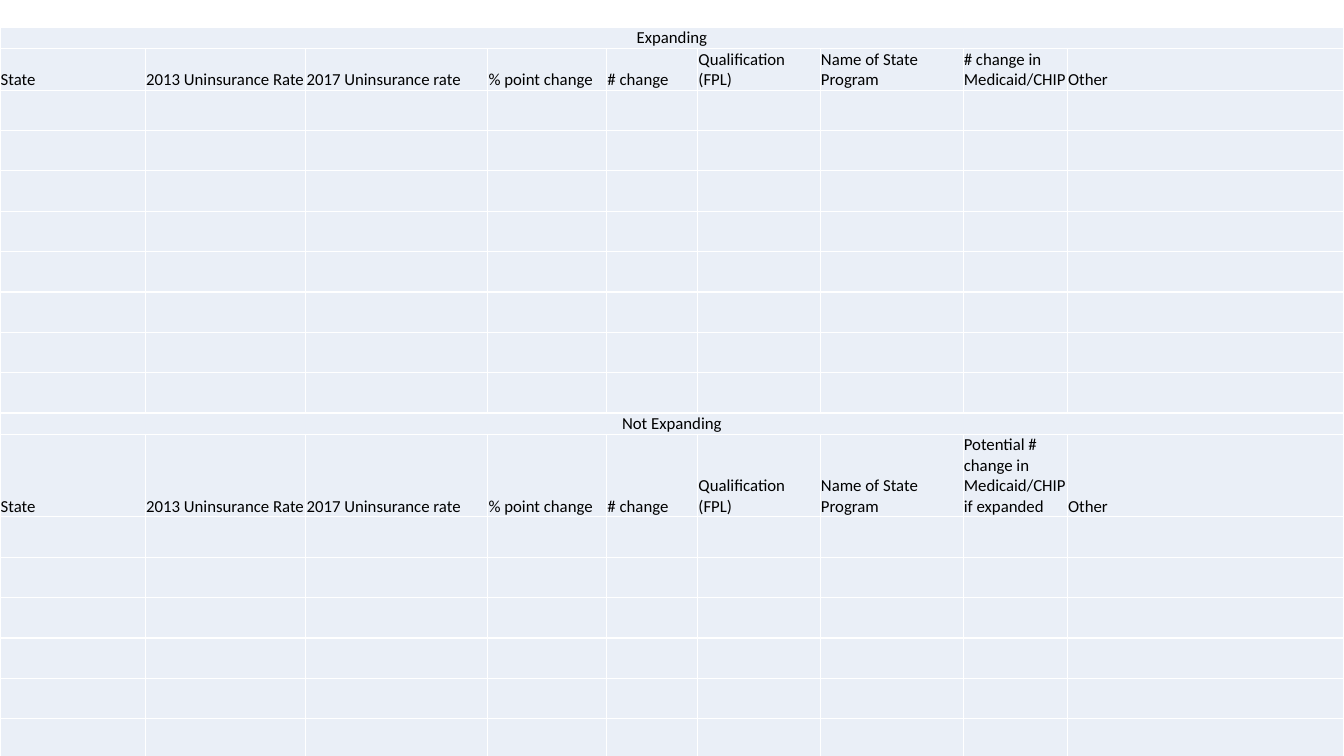
import dataclasses

import pptx
import pptx.dml.color
import pptx.enum.text
import pptx.oxml
import pptx.oxml.ns
import pptx.util

Pt = pptx.util.Pt
Color = pptx.dml.color.RGBColor.from_string
Align = pptx.enum.text.PP_ALIGN


@dataclasses.dataclass(frozen=True)
class Theme:
    font: str = "Calibri"
    text_size: float = 12
    text: str = "000000"
    cell_fill: str = "EAEFF7"
    border: str = "FFFFFF"
    border_width: float = 1
    inset: float = 0.5


class SlideBuilder:
    def __init__(self, slide, theme):
        self.slide = slide
        self.theme = theme

    def border_cell(self, cell):
        properties = cell._tc.get_or_add_tcPr()
        for side in ("lnL", "lnR", "lnT", "lnB"):
            properties.append(pptx.oxml.parse_xml(
                f'<a:{side} {pptx.oxml.ns.nsdecls("a")} w="{Pt(self.theme.border_width)}">'
                f'<a:solidFill><a:srgbClr val="{self.theme.border}"/></a:solidFill>'
                f'</a:{side}>'))

    def style_cell(self, cell):
        self.border_cell(cell)
        cell.fill.solid()
        cell.fill.fore_color.rgb = Color(self.theme.cell_fill)
        cell.margin_left = cell.margin_right = cell.margin_top = Pt(self.theme.inset)
        cell.margin_bottom = 0
        cell.vertical_anchor = pptx.enum.text.MSO_ANCHOR.BOTTOM

    def write_cell(self, cell, text, alignment=Align.LEFT):
        cell.text_frame.text = text
        paragraph = cell.text_frame.paragraphs[0]
        paragraph.alignment = alignment
        for run in paragraph.runs:
            run.font.name = self.theme.font
            run.font.size = Pt(self.theme.text_size)
            run.font.color.rgb = Color(self.theme.text)

    def table(self, left, top, column_widths, row_heights):
        frame = self.slide.shapes.add_table(
            len(row_heights), len(column_widths), Pt(left), Pt(top),
            Pt(sum(column_widths)), Pt(sum(row_heights)))
        table = frame.table
        table.first_row = table.horz_banding = False
        for column, width in zip(table.columns, column_widths):
            column.width = Pt(width)
        for row, height in zip(table.rows, row_heights):
            row.height = Pt(height)
        for cell in table.iter_cells():
            self.style_cell(cell)
        return table

    def section(self, table, first_row, banner, headings):
        banner_cell = table.cell(first_row, 0)
        banner_cell.merge(table.cell(first_row, len(headings) - 1))
        self.write_cell(banner_cell, banner, Align.CENTER)
        for column, heading in enumerate(headings):
            self.write_cell(table.cell(first_row + 1, column), heading)


COLUMN_WIDTHS = [103.9, 114.6, 130, 85, 65, 87.5, 102.1, 74.5, 197.4]
BANNER_HEIGHT, HEADING_HEIGHT, STATE_HEIGHT = 15, 29.5, 28.85
SECTIONS = [
    ("Expanding", "# change in Medicaid/CHIP", 8),
    ("Not Expanding", "Potential # change in Medicaid/CHIP if expanded", 7),
]


def main():
    presentation = pptx.Presentation()
    presentation.slide_width, presentation.slide_height = Pt(960), Pt(540)
    slide = presentation.slides.add_slide(presentation.slide_layouts[6])
    builder = SlideBuilder(slide, Theme())

    row_heights = []
    for _, _, state_count in SECTIONS:
        row_heights += [BANNER_HEIGHT, HEADING_HEIGHT] + [STATE_HEIGHT] * state_count
    table = builder.table(0, 19.5, COLUMN_WIDTHS, row_heights)

    first_row = 0
    for banner, enrollment_heading, state_count in SECTIONS:
        headings = [
            "State", "2013 Uninsurance Rate", "2017 Uninsurance rate",
            "% point change", "# change", "Qualification (FPL)",
            "Name of State Program", enrollment_heading, "Other",
        ]
        builder.section(table, first_row, banner, headings)
        first_row += state_count + 2

    presentation.save("out.pptx")


if __name__ == "__main__":
    main()
